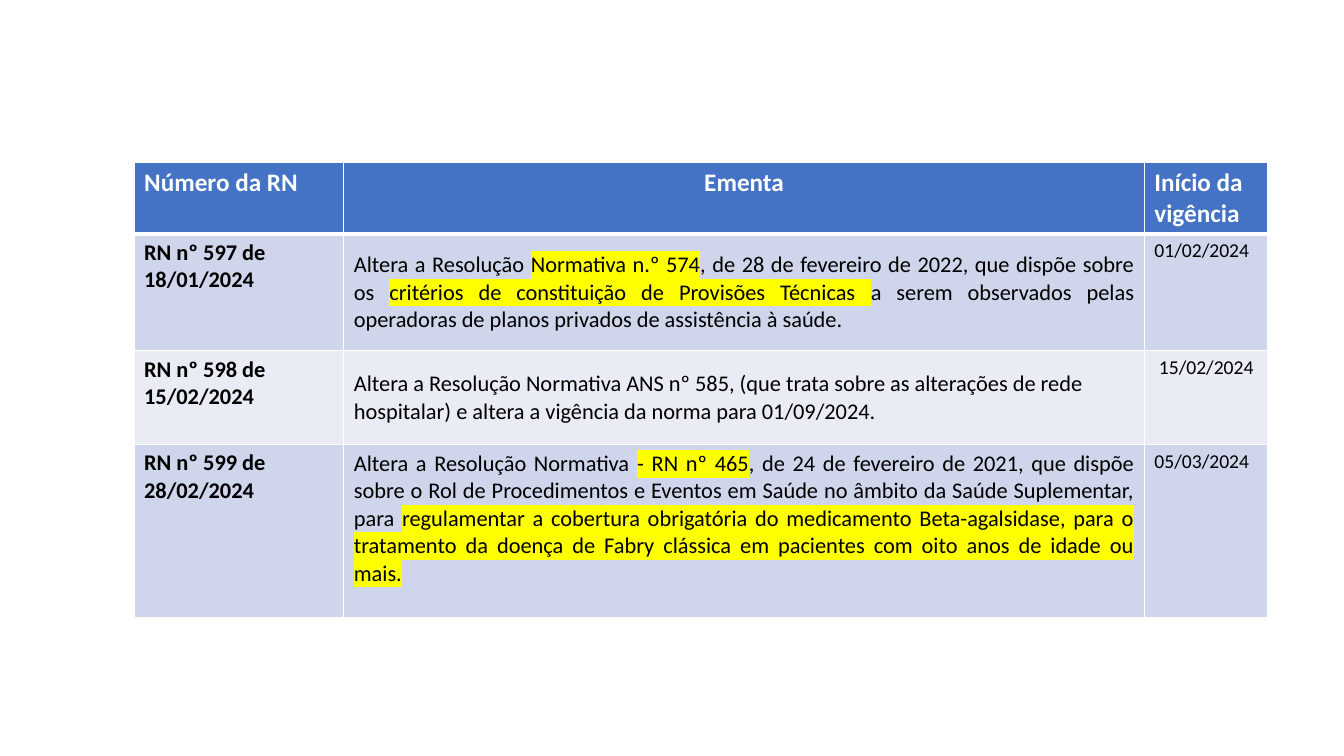
"""Build a slide with a table of regulatory resolutions and their effective dates."""
from lxml import etree
from pptx import Presentation
from pptx.dml.color import RGBColor
from pptx.enum.text import MSO_ANCHOR, PP_ALIGN
from pptx.oxml.ns import qn
from pptx.util import Inches, Pt

LEFT, CENTER, JUSTIFY = PP_ALIGN.LEFT, PP_ALIGN.CENTER, PP_ALIGN.JUSTIFY
TOP, MIDDLE = MSO_ANCHOR.TOP, MSO_ANCHOR.MIDDLE
COLORS = {"header": "4472C4", "odd": "CFD5EA", "even": "E9EBF5",
          "white": "FFFFFF", "text": "000000", "mark": "FFFF00"}
COLUMN_WIDTHS = [2.08, 7.94, 1.22]
ROW_HEIGHTS = [0.7, 1.16, 0.93, 1.72]
BODY_SIZES = [16, 16, 14]
SUMMARY_ALIGNMENTS = [CENTER, JUSTIFY, LEFT, JUSTIFY]

# Every second piece of a summary is highlighted.
resolutions = [
    [["Número da RN"], ["Ementa"], ["Início da vigência"]],
    [["RN nº 597 de 18/01/2024"],
     ["Altera a Resolução ", "Normativa n.º 574",
      ", de 28 de fevereiro de 2022, que dispõe sobre os ",
      "critérios de constituição de Provisões Técnicas ",
      "a serem observados pelas operadoras de planos privados de assistência à saúde."],
     ["01/02/2024"]],
    [["RN nº 598 de 15/02/2024"],
     ["Altera a Resolução Normativa ANS nº 585, (que trata sobre as alterações de rede "
      "hospitalar) e altera a vigência da norma para 01/09/2024."],
     [" 15/02/2024"]],
    [["RN nº 599 de 28/02/2024"],
     ["Altera a Resolução Normativa ", "- RN nº 465",
      ", de 24 de fevereiro de 2021, que dispõe sobre o Rol de Procedimentos e Eventos "
      "em Saúde no âmbito da Saúde Suplementar, para ",
      "regulamentar a cobertura obrigatória do medicamento Beta-agalsidase, para o "
      "tratamento da doença de Fabry clássica em pacientes com oito anos de idade ou mais."],
     ["05/03/2024"]],
]


def add_solid_color(parent, tag, color):
    holder = etree.SubElement(parent, qn(tag))
    etree.SubElement(holder, qn("a:srgbClr"), val=color)


def add_border(cell, side, points):
    line = etree.SubElement(cell._tc.get_or_add_tcPr(), qn(f"a:ln{side}"), w=str(Pt(points)))
    add_solid_color(line, "a:solidFill", COLORS["white"])


prs = Presentation()
prs.slide_width, prs.slide_height = Inches(13.33), Inches(7.5)
slide = prs.slides.add_slide(prs.slide_layouts[6])
table = slide.shapes.add_table(
    len(ROW_HEIGHTS), len(COLUMN_WIDTHS), Inches(1.33), Inches(1.61),
    Inches(sum(COLUMN_WIDTHS)), Inches(sum(ROW_HEIGHTS))).table
for column, width in zip(table.columns, COLUMN_WIDTHS):
    column.width = Inches(width)
for row, height in zip(table.rows, ROW_HEIGHTS):
    row.height = Inches(height)

for r, resolution in enumerate(resolutions):
    is_header = r == 0
    band = "header" if is_header else "odd" if r % 2 else "even"
    for c, pieces in enumerate(resolution):
        is_summary = c == 1
        cell = table.cell(r, c)
        add_border(cell, "L", 1)
        add_border(cell, "R", 1)
        add_border(cell, "T", 3 if r == 1 else 1)
        add_border(cell, "B", 3 if is_header else 1)
        cell.fill.solid()
        cell.fill.fore_color.rgb = RGBColor.from_string(COLORS[band])
        cell.vertical_anchor = MIDDLE if is_summary and not is_header else TOP
        paragraph = cell.text_frame.paragraphs[0]
        paragraph.alignment = SUMMARY_ALIGNMENTS[r] if is_summary else LEFT
        for i, piece in enumerate(pieces):
            run = paragraph.add_run()
            run.text = piece
            run.font.size = Pt(18 if is_header else BODY_SIZES[c])
            run.font.bold = is_header or c == 0
            run.font.color.rgb = RGBColor.from_string(COLORS["white" if is_header else "text"])
            if i % 2:
                add_solid_color(run.font._element, "a:highlight", COLORS["mark"])
            run.font.name = "Calibri"

table.cell(3, 1).margin_bottom = Inches(0.3)
prs.save("out.pptx")
